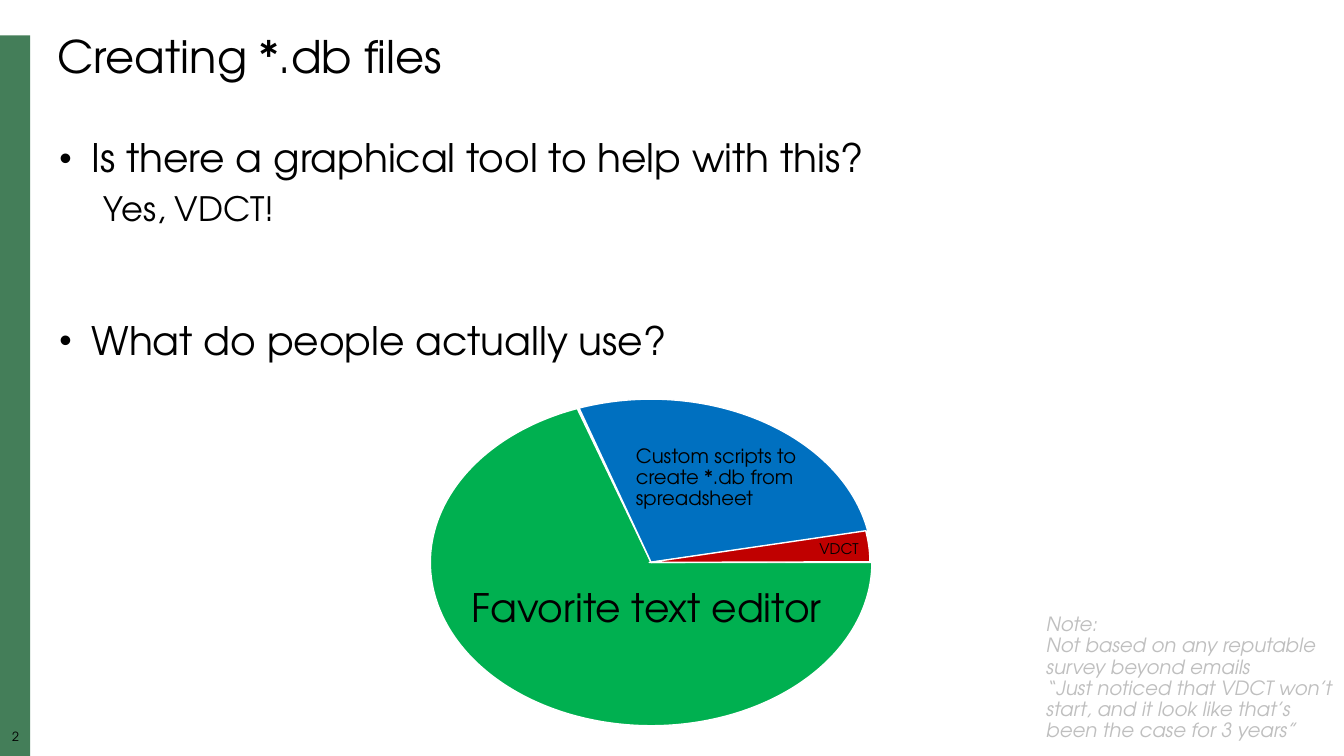
from dataclasses import dataclass

from lxml.etree import SubElement
from pptx import Presentation
from pptx.dml.color import RGBColor
from pptx.enum.shapes import MSO_SHAPE
from pptx.enum.text import MSO_AUTO_SIZE, PP_ALIGN
from pptx.oxml.ns import qn
from pptx.slide import Slide
from pptx.util import Pt

FONT = "TeX Gyre Adventor"
COLORS = {
    "bar": "447E59",
    "text": "000000",
    "note": "BFBFBF",
    "edge": "FFFFFF",
    "green": "00B050",
    "blue": "0070C0",
    "red": "C00000",
}
ANGLE = 0.6  # adjustment units per degree


@dataclass
class Para:
    text: str
    size: float
    before: float = 0
    margin: float = 0
    bullet: bool = False


@dataclass
class Label:
    left: float
    top: float
    width: float
    height: float
    paras: list[Para]
    color: str = "text"
    wrap: bool = True
    italic: bool = False
    center: bool = False
    inset: bool = True
    grow: bool = True


@dataclass
class Slice:
    left: float
    start: float
    end: float
    color: str


LABELS = [
    Label(0, 522, 22.3, 12.2, [Para("2", 9)], center=True, inset=False, grow=False),
    Label(33.8, 21.6, 900, 42.5, [Para("Creating *.db files", 32)]),
    Label(35.3, 95.8, 900, 352.8, [
        Para("Is there a graphical tool to help with this?", 28, margin=23, bullet=True),
        Para("Yes, VDCT!", 24, before=8, margin=31.7),
        Para("What do people actually use?", 28, before=66, margin=23, bullet=True),
    ], grow=False),
    Label(329.8, 416.9, 270.7, 38.2, [Para("Favorite text editor", 28)], wrap=False),
    Label(447.1, 315.4, 151.9, 53.3,
          [Para("Custom scripts to create *.db from spreadsheet", 14)]),
    Label(578.2, 383.8, 44.6, 19.4, [Para("VDCT", 10.5)], wrap=False),
    Label(740.2, 435.6, 219.6, 98.6, [
        Para("Note:", 14),
        Para("Not based on any reputable survey beyond emails\v"
             "“Just noticed that VDCT won’t start, and it look like that’s "
             "been the case for 3 years”", 14),
    ], color="note", italic=True),
]

SLICES = [
    Slice(307.4, 0, 244.35, "green"),
    Slice(307.4, 244.99, 351.77, "blue"),
    Slice(306, 351.7, 359.83, "red"),
]


def rgb(name: str) -> RGBColor:
    return RGBColor.from_string(COLORS[name])


def indent(para, spec: Para) -> None:
    """Set the left margin and, if asked for, a hanging bullet."""
    props = para._p.get_or_add_pPr()
    props.set("marL", str(Pt(spec.margin)))
    props.set("indent", str(-Pt(spec.margin) if spec.bullet else 0))
    if spec.bullet:
        SubElement(props, qn("a:buSzPct"), val="90000")
        SubElement(props, qn("a:buFont"), typeface="Arial")
        SubElement(props, qn("a:buChar"), char="•")


def draw_label(slide: Slide, label: Label) -> None:
    box = slide.shapes.add_textbox(
        Pt(label.left), Pt(label.top), Pt(label.width), Pt(label.height))
    frame = box.text_frame
    frame.word_wrap = label.wrap
    frame.auto_size = (
        MSO_AUTO_SIZE.SHAPE_TO_FIT_TEXT if label.grow else MSO_AUTO_SIZE.NONE)
    if not label.inset:
        frame.margin_left = frame.margin_right = 0
        frame.margin_top = frame.margin_bottom = 0
    for i, spec in enumerate(label.paras):
        para = frame.add_paragraph() if i else frame.paragraphs[0]
        para.text = spec.text
        indent(para, spec)
        para.line_spacing = 0.9
        para.space_before = Pt(spec.before)
        para.alignment = PP_ALIGN.CENTER if label.center else PP_ALIGN.LEFT
        font = para.font
        font.name = FONT
        font.size = Pt(spec.size)
        font.italic = label.italic
        font.color.rgb = rgb(label.color)


def draw_bar(slide: Slide) -> None:
    bar = slide.shapes.add_shape(
        MSO_SHAPE.RECTANGLE, Pt(0), Pt(25.2), Pt(21.6), Pt(514.8))
    bar.shadow.inherit = False
    bar.fill.solid()
    bar.fill.fore_color.rgb = rgb("bar")
    bar.line.fill.background()


def draw_slice(slide: Slide, part: Slice) -> None:
    pie = slide.shapes.add_shape(
        MSO_SHAPE.PIE, Pt(part.left), Pt(285.1), Pt(315.4), Pt(233.3))
    pie.adjustments[0] = part.start * ANGLE
    pie.adjustments[1] = part.end * ANGLE
    pie.shadow.inherit = False
    pie.fill.solid()
    pie.fill.fore_color.rgb = rgb(part.color)
    pie.line.color.rgb = rgb("edge")
    pie.line.width = Pt(1)


def main() -> None:
    deck = Presentation()
    deck.slide_width, deck.slide_height = Pt(960), Pt(540)
    slide = deck.slides.add_slide(deck.slide_layouts[6])
    draw_bar(slide)
    for part in SLICES:
        draw_slice(slide, part)
    for label in LABELS:
        draw_label(slide, label)
    deck.save("out.pptx")


if __name__ == "__main__":
    main()
